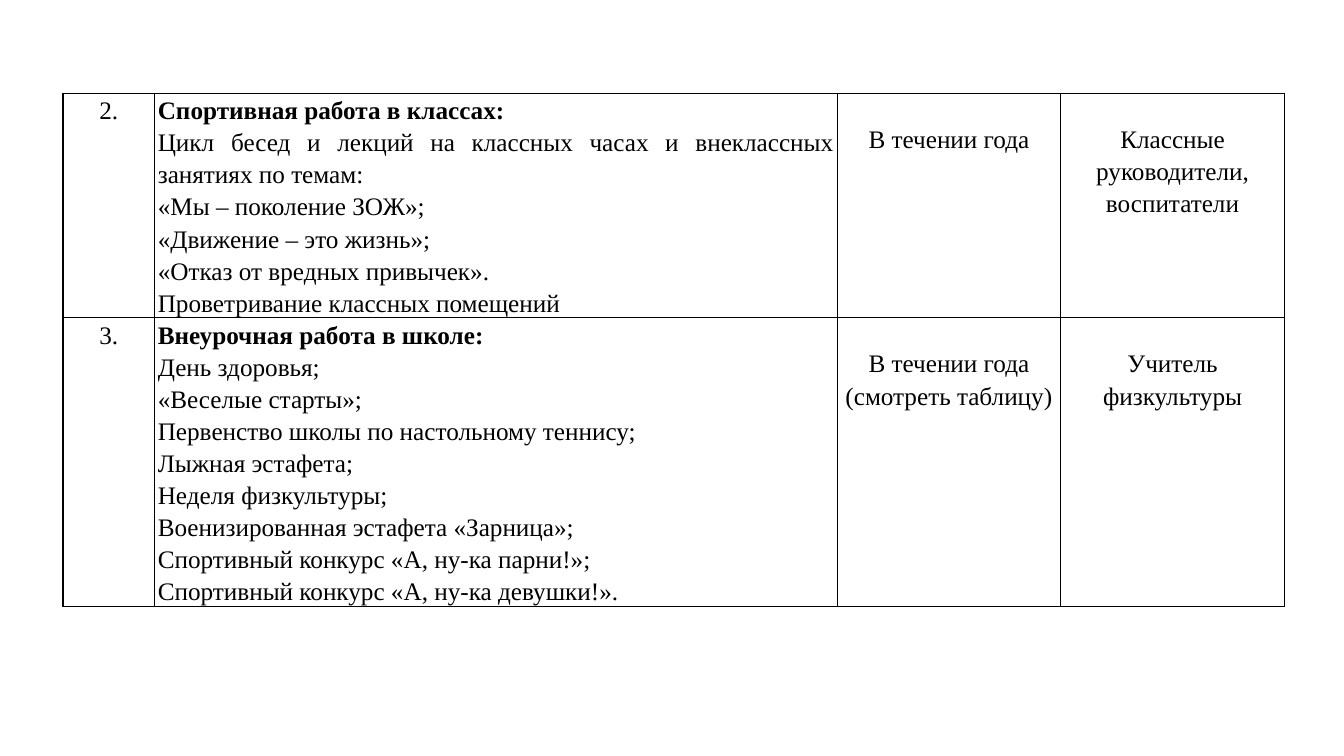
from dataclasses import dataclass

from lxml import etree
from pptx import Presentation
from pptx.dml.color import RGBColor
from pptx.enum.text import PP_ALIGN
from pptx.oxml import parse_xml
from pptx.oxml.ns import nsdecls
from pptx.table import _Cell
from pptx.util import Pt

CENTER, JUSTIFY = PP_ALIGN.CENTER, PP_ALIGN.JUSTIFY
BLACK = RGBColor(0x00, 0x00, 0x00)
FONT = "Times New Roman"
COLUMN_WIDTHS = (65.5, 487.5, 159.75, 159.75)
LEFT, TOP = 45, 66.5
SIDE_INSET = 2.25
LOWERED_INSET = 20.5  # term and staff start one line lower


@dataclass(frozen=True)
class Activity:
    number: str
    title: str
    details: tuple[str, ...]
    term: str
    staff: str
    height: float


ACTIVITIES = (
    Activity(
        "2.",
        "Спортивная работа в классах:",
        (
            "Цикл бесед и лекций на классных часах и внеклассных занятиях по темам:",
            "«Мы – поколение ЗОЖ»;",
            "«Движение – это жизнь»;",
            "«Отказ от вредных привычек».",
            "Проветривание классных помещений",
        ),
        "В течении года",
        "Классные руководители, воспитатели",
        160,
    ),
    Activity(
        "3.",
        "Внеурочная работа в школе:",
        (
            "День здоровья;",
            "«Веселые старты»;",
            "Первенство школы по настольному теннису;",
            "Лыжная эстафета;",
            "Неделя физкультуры;",
            "Военизированная эстафета «Зарница»;",
            "Спортивный конкурс «А, ну-ка парни!»;",
            "Спортивный конкурс «А, ну-ка девушки!».",
        ),
        "В течении года (смотреть таблицу)",
        "Учитель физкультуры",
        206,
    ),
)


def border(side: str) -> etree._Element:
    return parse_xml(
        f'<a:{side} {nsdecls("a")} w="{Pt(1)}"><a:solidFill>'
        f'<a:srgbClr val="{BLACK}"/></a:solidFill></a:{side}>'
    )


def fill_cell(cell: _Cell, lines: tuple[str, ...], align: PP_ALIGN,
              top: float = 0, titled: bool = False) -> None:
    cell.margin_left = cell.margin_right = Pt(SIDE_INSET)
    cell.margin_top, cell.margin_bottom = Pt(top), Pt(0)
    cell.fill.background()
    tc_pr = cell._tc.get_or_add_tcPr()
    for i, side in enumerate(("lnL", "lnR", "lnT", "lnB")):
        tc_pr.insert(i, border(side))
    tf = cell.text_frame
    tf.text = "\n".join(lines)
    for i, p in enumerate(tf.paragraphs):
        p.alignment, p.line_spacing = align, 1.15
        p.font.name, p.font.size = FONT, Pt(18)
        p.font.bold = titled and i == 0
        p.font.color.rgb = BLACK


def main() -> None:
    prs = Presentation()
    prs.slide_width, prs.slide_height = Pt(960), Pt(540)
    s = prs.slides.add_slide(prs.slide_layouts[6])

    # Plan table
    table = s.shapes.add_table(
        len(ACTIVITIES), len(COLUMN_WIDTHS), Pt(LEFT), Pt(TOP),
        Pt(sum(COLUMN_WIDTHS)), Pt(sum(a.height for a in ACTIVITIES)),
    ).table
    table.first_row = table.horz_banding = False
    for column, width in zip(table.columns, COLUMN_WIDTHS):
        column.width = Pt(width)

    # One row per activity
    for row, activity in zip(table.rows, ACTIVITIES):
        row.height = Pt(activity.height)
        number, work, term, staff = row.cells
        fill_cell(number, (activity.number,), CENTER)
        fill_cell(work, (activity.title, *activity.details), JUSTIFY, titled=True)
        fill_cell(term, (activity.term,), CENTER, LOWERED_INSET)
        fill_cell(staff, (activity.staff,), CENTER, LOWERED_INSET)

    prs.save("out.pptx")


if __name__ == "__main__":
    main()
